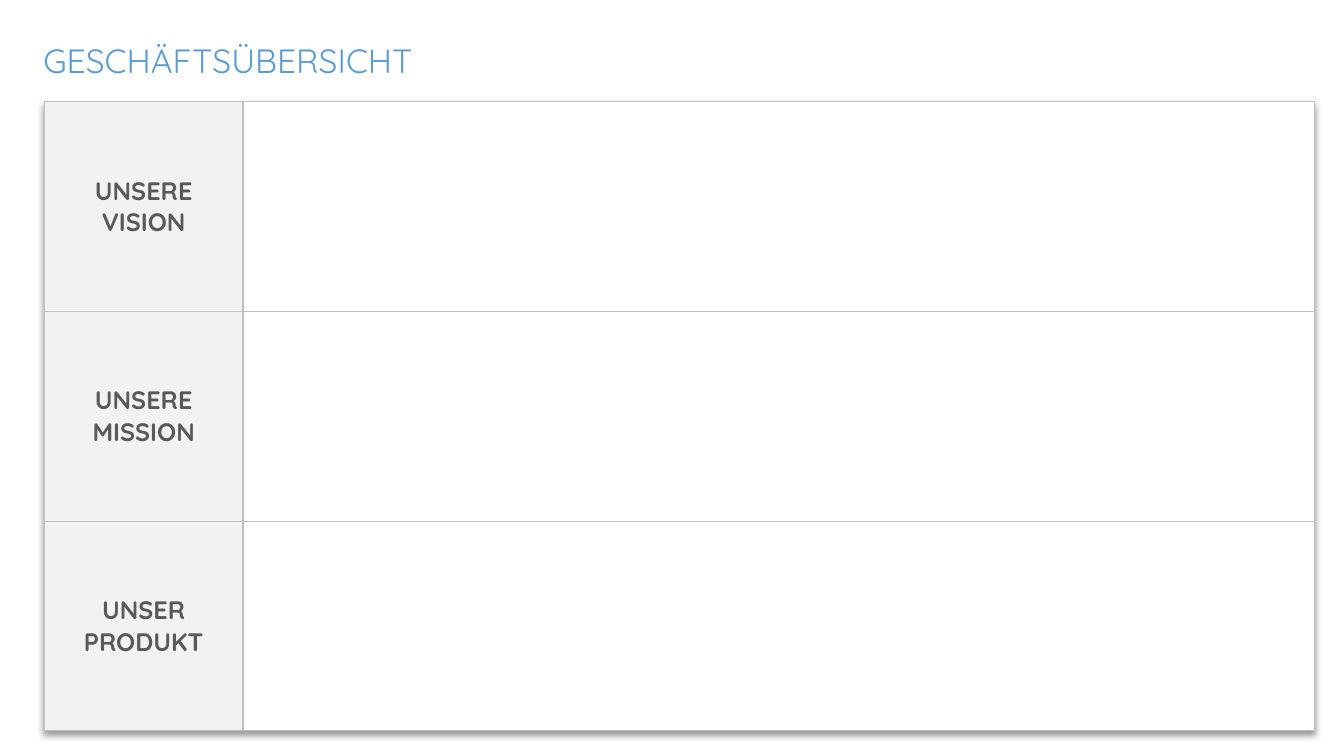
from lxml import etree
from pptx import Presentation
from pptx.dml.color import RGBColor
from pptx.enum.text import MSO_ANCHOR, MSO_AUTO_SIZE, PP_ALIGN
from pptx.oxml import parse_xml
from pptx.oxml.ns import nsdecls, qn
from pptx.util import Emu, Pt

MIDDLE, TOP = MSO_ANCHOR.MIDDLE, MSO_ANCHOR.TOP
LEFT, CENTER = PP_ALIGN.LEFT, PP_ALIGN.CENTER
NO_AUTOFIT = MSO_AUTO_SIZE.NONE
TITLE_ONLY = 5

EMU_PER_PX = 9144  # 100 px to the inch
SLIDE_W, SLIDE_H = 1333, 750
COLORS = {
    "title": "5B9BD5",
    "label": "595959",
    "label_fill": "F2F2F2",
    "entry_fill": "FFFFFF",
    "border": "BFBFBF",
    "shadow": "000000",
}
TITLE_FONT = {"name": "Quicksand", "size": Pt(24), "bold": False}
LABEL_FONT = {"name": "Quicksand", "size": Pt(18), "bold": True}
TOPICS = ["UNSERE VISION", "UNSERE MISSION", "UNSER PRODUKT"]
LABEL_W = 197


def px(length):
    return Emu(length * EMU_PER_PX)


def rgb(role):
    return RGBColor.from_string(COLORS[role])


def write(frame, text, font_format, role, align):
    paragraph = frame.paragraphs[0]
    paragraph.alignment = align
    run = paragraph.add_run()
    run.text = text
    for attribute, value in font_format.items():
        setattr(run.font, attribute, value)
    run.font.color.rgb = rgb(role)


def add_borders(cell):
    properties = cell._tc.get_or_add_tcPr()
    for position, side in enumerate(("lnL", "lnR", "lnT", "lnB")):
        line = etree.Element(qn(f"a:{side}"), w=str(Pt(1)))
        fill = etree.SubElement(line, qn("a:solidFill"))
        etree.SubElement(fill, qn("a:srgbClr"), val=COLORS["border"])
        properties.insert(position, line)


def add_shadow(table):
    table._tbl.tblPr.insert(0, parse_xml(
        f'<a:effectLst {nsdecls("a")}>'
        f'<a:outerShdw blurRad="{Pt(4)}" dist="{Pt(3)}" dir="5400000" algn="t" rotWithShape="0">'
        f'<a:srgbClr val="{COLORS["shadow"]}"><a:alpha val="40000"/></a:srgbClr>'
        '</a:outerShdw></a:effectLst>'))


def build_title(slide, left, top, width, height):
    title = slide.shapes.title
    box = {"left": left, "top": top, "width": width, "height": height}
    for attribute, value in box.items():
        setattr(title, attribute, px(value))
    frame = title.text_frame
    frame_format = {"word_wrap": True, "auto_size": NO_AUTOFIT, "vertical_anchor": TOP}
    for attribute, value in frame_format.items():
        setattr(frame, attribute, value)
    write(frame, "GESCHÄFTSÜBERSICHT", TITLE_FONT, "title", LEFT)


def build_overview(slide, left, top, width, height):
    overview = slide.shapes.add_table(
        len(TOPICS), 2, px(left), px(top), px(width), px(height)).table
    overview.first_row = overview.horz_banding = False
    add_shadow(overview)

    # Narrow label column, wide entry column
    for column, column_width in zip(overview.columns, (LABEL_W, width - LABEL_W)):
        column.width = px(column_width)

    # One row for each topic
    for row, topic in zip(overview.rows, TOPICS):
        row.height = px(height // len(TOPICS))
        label, entry = row.cells
        for cell, role in ((label, "label_fill"), (entry, "entry_fill")):
            cell.fill.solid()
            cell.fill.fore_color.rgb = rgb(role)
            add_borders(cell)
        label.vertical_anchor = MIDDLE
        write(label.text_frame, topic, LABEL_FONT, "label", CENTER)


def main():
    presentation = Presentation()
    presentation.slide_width, presentation.slide_height = px(SLIDE_W), px(SLIDE_H)
    slide = presentation.slides.add_slide(presentation.slide_layouts[TITLE_ONLY])
    build_title(slide, 33, 35, 808, 50)
    build_overview(slide, 44, 101, 1260, 624)
    presentation.save("out.pptx")


if __name__ == "__main__":
    main()
